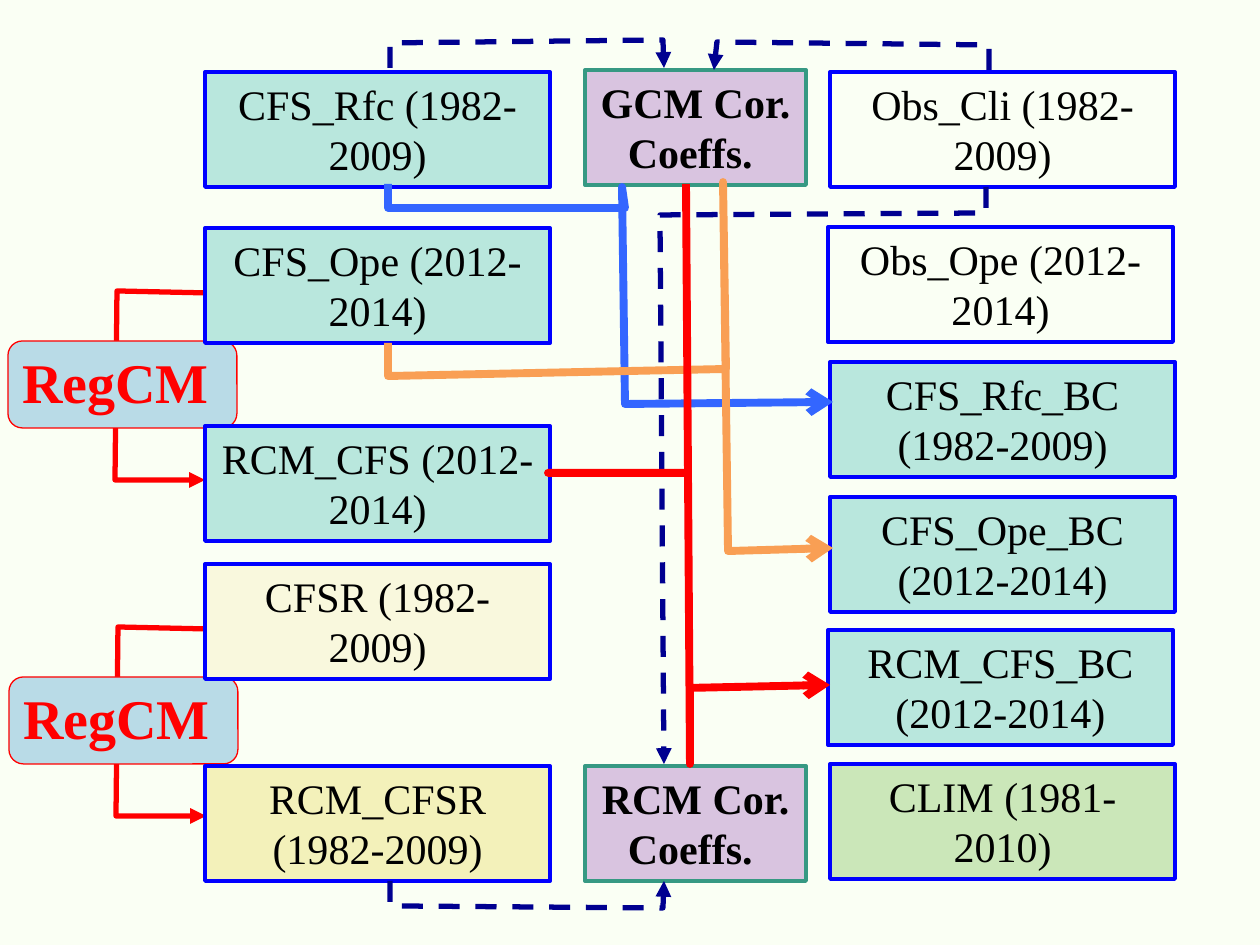
from typing import NamedTuple, Optional
from lxml.etree import SubElement
from pptx import Presentation
from pptx.dml.color import RGBColor
from pptx.enum.dml import MSO_LINE as Dash
from pptx.enum.shapes import MSO_SHAPE as Form
from pptx.enum.text import MSO_ANCHOR as Anchor, MSO_AUTO_SIZE as Fit, PP_ALIGN as Align
from pptx.oxml.ns import qn
from pptx.util import Emu, Pt

SCALE = 914400 / 126
BLUE, NAVY, RED, TEAL = "0000FF", "000090", "FF0000", "369983"
MINT, LILAC = "B9E7DD", "D9C4E0"
LEFT, MID, RIGHT = 205, 585, 830
WIDE, SLIM, HIGH = 345, 221, 115


class Box(NamedTuple):
    text: str
    x: int
    y: int
    fill: Optional[str] = MINT
    edge: str = BLUE
    w: int = WIDE
    bold: bool = False


class Route(NamedTuple):
    points: list
    color: str
    width: float
    head: str = "triangle"
    dash: bool = False


def px(n: int) -> Emu:
    return Emu(round(n * SCALE))


def rgb(code: str) -> RGBColor:
    return RGBColor.from_string(code)


def write(shape, text: str, size: int = 24, color: str = "000000", bold: bool = False) -> None:
    frame = shape.text_frame
    frame.word_wrap = True
    frame.auto_size = Fit.SHAPE_TO_FIT_TEXT
    frame.vertical_anchor = Anchor.TOP
    para = frame.paragraphs[0]
    para.alignment = Align.CENTER
    run = para.add_run()
    run.text = text
    font = run.font
    font.name, font.size, font.bold = "Times New Roman", Pt(size), bold
    font.color.rgb = rgb(color)


def paint(shape, fill: Optional[str], edge: str, width: float) -> None:
    shape.shadow.inherit = False
    if fill:
        shape.fill.solid()
        shape.fill.fore_color.rgb = rgb(fill)
    else:
        shape.fill.background()
    shape.line.color.rgb = rgb(edge)
    shape.line.width = Pt(width)


def draw_box(shapes, box: Box) -> None:
    shape = shapes.add_shape(Form.RECTANGLE, px(box.x), px(box.y), px(box.w), px(HIGH))
    paint(shape, box.fill, box.edge, 2.25)
    write(shape, box.text, bold=box.bold)


def draw_route(shapes, route: Route) -> None:
    start, *rest = route.points
    path = shapes.build_freeform(*start, scale=SCALE)
    path.add_line_segments(rest, close=False)
    shape = path.convert_to_shape()
    paint(shape, None, route.color, route.width)
    if route.dash:
        shape.line.dash_style = Dash.DASH
    SubElement(shape.line._get_or_add_ln(), qn("a:tailEnd"), type=route.head)


def draw_model(shapes, x: int, y: int) -> None:
    group = shapes.add_group_shape().shapes
    bend = [(x + 199, y - 48), (x + 109, y - 50), (x + 107, y + 139), (x + 197, y + 139)]
    draw_route(group, Route(bend, RED, 3))
    panel = group.add_shape(Form.ROUNDED_RECTANGLE, px(x), px(y), px(229), px(87))
    paint(panel, "B9DBE7", RED, 0.75)
    label = group.add_textbox(px(x), px(y), px(229), px(81))
    write(label, "RegCM ", size=32, color=RED, bold=True)


MODELS = [(8, 341), (9, 677)]
BOXES = [
    Box("CFS_Rfc (1982-2009)", LEFT, 72),
    Box("CFS_Ope (2012-2014)", LEFT, 228),
    Box("RCM_CFS (2012-2014)", LEFT, 426),
    Box("CFSR (1982-2009)", LEFT, 564, "F9F8DD"),
    Box("RCM_CFSR (1982-2009)", LEFT, 766, "F3F1BA"),
    Box("GCM Cor. Coeffs. ", MID, 70, LILAC, TEAL, SLIM, True),
    Box("RCM Cor. Coeffs. ", MID, 766, LILAC, TEAL, SLIM, True),
    Box("Obs_Cli (1982-2009)", RIGHT, 72, None),
    Box("Obs_Ope (2012-2014)", RIGHT - 2, 227, None),
    Box("CFS_Rfc_BC (1982-2009)", RIGHT, 362),
    Box("CFS_Ope_BC (2012-2014)", RIGHT, 497),
    Box("RCM_CFS_BC (2012-2014)", RIGHT - 2, 630),
    Box("CLIM (1981-2010)", RIGHT, 764, "CBE7B9"),
]
DASHED = [
    [(390, 68), (390, 43), (663, 40), (664, 68)],
    [(989, 70), (989, 45), (717, 42), (714, 70)],
    [(390, 881), (390, 906), (663, 908), (664, 881)],
    [(986, 187), (986, 213), (660, 215), (664, 764)],
]
SOLID = [
    ("3366FF", [(388, 184), (388, 208), (625, 208), (622, 187), (625, 404), (833, 402)]),
    ("F99F54", [(388, 343), (388, 376), (726, 369), (723, 182), (728, 551), (833, 548)]),
    (RED, [(686, 184), (688, 473), (548, 473), (688, 473), (690, 764), (690, 688), (830, 685)]),
]


def main() -> None:
    """Draw the bias correction flow between the model runs and the observations."""
    deck = Presentation()
    deck.slide_width, deck.slide_height = px(1260), px(945)
    slide = deck.slides.add_slide(deck.slide_layouts[6])
    slide.background.fill.solid()
    slide.background.fill.fore_color.rgb = rgb("FAFFF4")
    shapes = slide.shapes
    for x, y in MODELS:
        draw_model(shapes, x, y)
    for box in BOXES:
        draw_box(shapes, box)
    for points in DASHED:
        draw_route(shapes, Route(points, NAVY, 3, dash=True))
    for color, points in SOLID:
        draw_route(shapes, Route(points, color, 4.5, "arrow"))
    deck.save("out.pptx")


if __name__ == "__main__":
    main()
